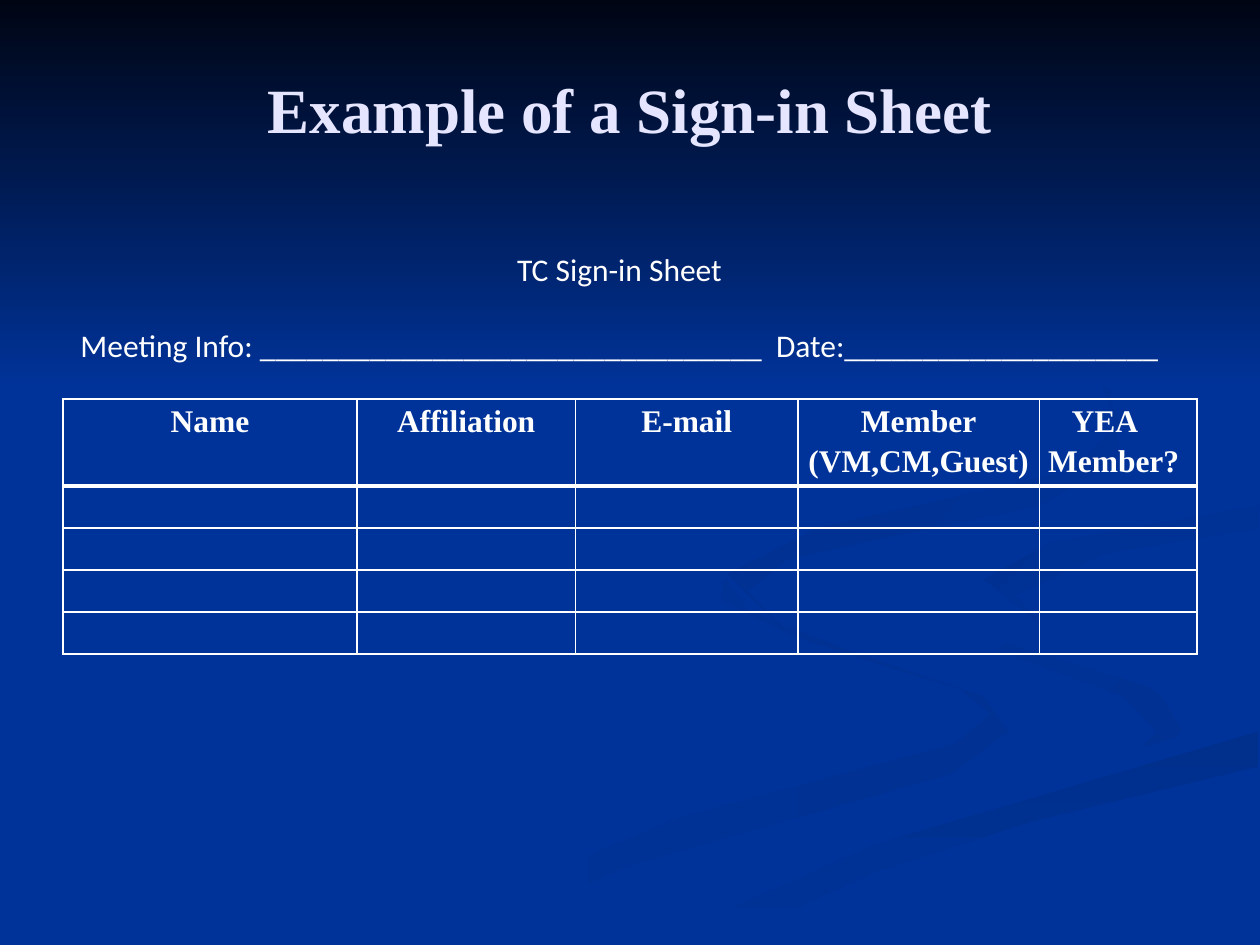
import pptx
import pptx.util
import pptx.dml.color
import pptx.enum.shapes
import pptx.enum.text
import pptx.oxml.ns
import lxml.etree

Pt = pptx.util.Pt
ALIGN = pptx.enum.text.PP_ALIGN
ANCHOR = pptx.enum.text.MSO_ANCHOR
COLORS = {
    "blue": "003399",
    "ribbon_blue": "003193",
    "wave_blue": "002F8C",
    "edge_blue": "003091",
    "curl_blue": "002F8E",
    "night": "000514",
    "lavender": "E5E5FF",
    "white": "FFFFFF",
}


def style_paragraph(para, text, size, face, color, bold=False, align=ALIGN.CENTER):
    para.text = text
    para.alignment = align
    para.font.size = Pt(size)
    para.font.name = face
    para.font.bold = bold
    para.font.color.rgb = pptx.dml.color.RGBColor.from_string(COLORS[color])


def paint(shape, start, end, angle):
    shape.shadow.inherit = False
    shape.line.fill.background()
    shape.fill.gradient()
    shape.fill.gradient_angle = (360 - angle) % 360
    for stop, name in zip(shape.fill.gradient_stops, (start, end)):
        stop.color.rgb = pptx.dml.color.RGBColor.from_string(COLORS[name])


deck = pptx.Presentation()
deck.slide_width, deck.slide_height = Pt(720), Pt(540)
page = deck.slides.add_slide(deck.slide_layouts[6])
page.background.fill.solid()
page.background.fill.fore_color.rgb = pptx.dml.color.RGBColor.from_string(COLORS["blue"])

ribbons = [
    ("blue", "ribbon_blue", 0, [
        (562, 398), (491, 374), (428, 349), (414, 330), (412, 343), (454, 364),
        (549, 394), (566, 408), (546, 425), (388, 467), (216, 539), (260, 539),
        (359, 495), (544, 442), (576, 418)]),
    ("blue", "ribbon_blue", 45, [
        (679, 410), (652, 389), (546, 359), (521, 334), (537, 360), (642, 398),
        (661, 418), (644, 436), (671, 424)]),
    ("wave_blue", "blue", 90, [
        (362, 539), (411, 539), (500, 498), (591, 469), (719, 438), (719, 418),
        (550, 466), (454, 499)]),
    ("blue", "blue", 0, [
        (522, 334), (558, 362), (662, 394), (677, 420), (535, 463), (343, 539),
        (374, 538), (501, 482), (719, 418), (719, 387), (599, 359), (562, 333),
        (612, 307), (719, 289), (719, 279), (582, 300)]),
    ("edge_blue", "blue", 45, [
        (562, 331), (595, 357), (580, 340), (632, 316), (719, 302), (719, 289),
        (601, 310)]),
    ("curl_blue", "blue", 45, [
        (492, 310), (594, 289), (640, 261), (634, 221), (549, 168), (626, 215),
        (640, 241), (613, 269), (467, 302), (416, 328), (448, 360), (427, 338),
        (449, 320)]),
]
for start, end, angle, outline in ribbons:
    builder = page.shapes.build_freeform(*outline[0], scale=Pt(1))
    builder.add_line_segments(outline[1:], close=True)
    paint(builder.convert_to_shape(), start, end, angle)

sky = page.shapes.add_shape(
    pptx.enum.shapes.MSO_SHAPE.RECTANGLE, Pt(0), Pt(0), Pt(720), Pt(222))
paint(sky, "night", "blue", 90)

title = page.shapes.add_textbox(Pt(36), Pt(21.6), Pt(648), Pt(81))
title.text_frame.word_wrap = True
title.text_frame.vertical_anchor = ANCHOR.MIDDLE
style_paragraph(title.text_frame.paragraphs[0], "Example of a Sign-in Sheet",
                36, "Times New Roman", "lavender", bold=True)

widths = [168, 125, 127, 138, 90]
heights = [48] + [24] * 4
headers = [["Name"], ["Affiliation"], ["E-mail"], ["Member", "(VM,CM,Guest)"],
           ["YEA", "Member?"]]
table = page.shapes.add_table(
    len(heights), len(widths), Pt(36), Pt(228), Pt(sum(widths)), Pt(sum(heights))).table
table.first_row = False
table.horz_banding = False
for column, width in zip(table.columns, widths):
    column.width = Pt(width)
for row_index, height in enumerate(heights):
    table.rows[row_index].height = Pt(height)
    for column_index, lines in enumerate(headers):
        cell = table.cell(row_index, column_index)
        cell.margin_left = cell.margin_right = Pt(5)
        cell.margin_top = cell.margin_bottom = Pt(0)
        properties = cell._tc.get_or_add_tcPr()
        for side in "LRTB":
            heavy = (row_index, side) in [(0, "B"), (1, "T")]
            border = lxml.etree.SubElement(
                properties, pptx.oxml.ns.qn("a:ln" + side), w=str(Pt(3 if heavy else 1)))
            fill = lxml.etree.SubElement(border, pptx.oxml.ns.qn("a:solidFill"))
            lxml.etree.SubElement(fill, pptx.oxml.ns.qn("a:srgbClr"), val=COLORS["white"])
        cell.fill.background()
        if row_index == 0:
            frame = cell.text_frame
            for line_index, line in enumerate(lines):
                para = frame.add_paragraph() if line_index else frame.paragraphs[0]
                align = ALIGN.LEFT if column_index == 4 else ALIGN.CENTER
                style_paragraph(para, line, 18, "Times New Roman", "white", True, align)
                para.line_spacing = 1.15
                if line == "YEA":
                    para._p.get_or_add_pPr().set("marL", str(Pt(13.5)))

info = page.shapes.add_textbox(Pt(36), Pt(139), Pt(636), Pt(73))
info.text_frame.word_wrap = True
info.text_frame.vertical_anchor = ANCHOR.MIDDLE
style_paragraph(info.text_frame.paragraphs[0], "TC Sign-in Sheet", 18, "Calibri", "white")
meeting = info.text_frame.add_paragraph()
style_paragraph(meeting, "Meeting Info: " + "_" * 32 + "  Date:" + "_" * 20,
                18, "Calibri", "white")
meeting.space_before = Pt(22)

deck.save("out.pptx")
